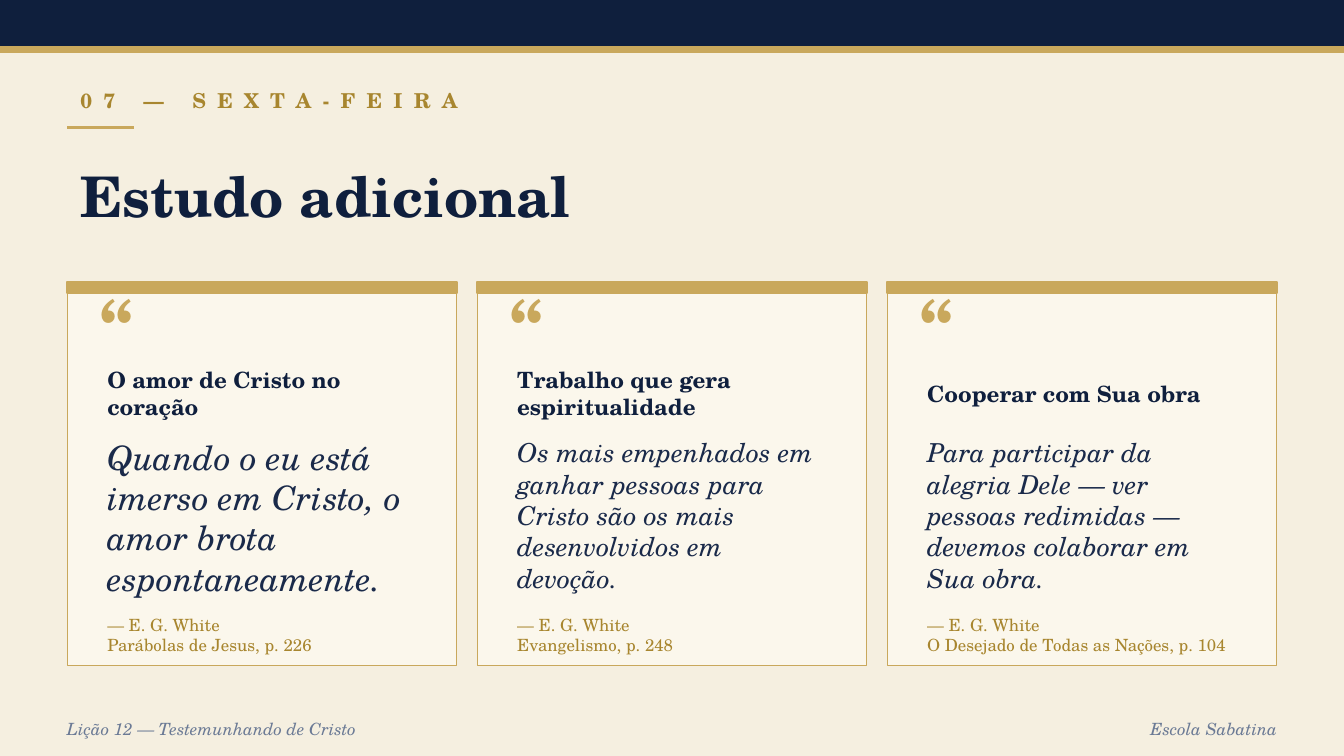
from pptx import Presentation
from pptx.dml.color import RGBColor
from pptx.enum.shapes import MSO_CONNECTOR, MSO_SHAPE
from pptx.enum.text import MSO_ANCHOR, PP_ALIGN
from pptx.oxml.ns import qn
from pptx.util import Pt
from lxml import etree

RECT = MSO_SHAPE.RECTANGLE
STRAIGHT = MSO_CONNECTOR.STRAIGHT
TOP, MIDDLE = MSO_ANCHOR.TOP, MSO_ANCHOR.MIDDLE
LEFT, RIGHT = PP_ALIGN.LEFT, PP_ALIGN.RIGHT

FONT = "TeX Gyre Schola"
COLORS = {
    "cream": "F5EFE0",
    "navy": "0F1F3D",
    "gold": "C9A85C",
    "dark_gold": "A8862F",
    "paper": "FBF7EC",
    "ink": "1A2A4A",
    "slate": "6B7A95",
}

SLIDE_W, SLIDE_H = 720, 405
MARGIN = 36
CARD_TOP, CARD_W, CARD_H = 151.2, 208.8, 205.2
CARD_STEP = (SLIDE_W - 2 * MARGIN - CARD_W) / 2

# Heading, quotation, its size, source
CARDS = [
    ("O amor de Cristo no coração",
     "Quando o eu está imerso em Cristo, o amor brota espontaneamente.",
     18, "Parábolas de Jesus, p. 226"),
    ("Trabalho que gera espiritualidade",
     "Os mais empenhados em ganhar pessoas para Cristo são os mais "
     "desenvolvidos em devoção.",
     14, "Evangelismo, p. 248"),
    ("Cooperar com Sua obra",
     "Para participar da alegria Dele — ver pessoas redimidas — devemos "
     "colaborar em Sua obra.",
     14, "O Desejado de Todas as Nações, p. 104"),
]


def rgb(name):
    return RGBColor.from_string(COLORS[name])


def add_rect(slide, left, top, width, height, fill, line=None, weight=1):
    rect = slide.shapes.add_shape(RECT, Pt(left), Pt(top), Pt(width), Pt(height))
    rect.shadow.inherit = False
    rect.fill.solid()
    rect.fill.fore_color.rgb = rgb(fill)
    rect.line.color.rgb = rgb(line or fill)
    rect.line.width = Pt(weight)


def add_rule(slide, left, top, width, color, weight):
    rule = slide.shapes.add_connector(
        STRAIGHT, Pt(left), Pt(top), Pt(left + width), Pt(top))
    rule.line.color.rgb = rgb(color)
    rule.line.width = Pt(weight)
    etree.SubElement(rule._element.spPr, qn("a:effectLst"))


def add_text(slide, text, left, top, width, height, *, size, color,
             bold=False, italic=False, align=LEFT, anchor=MIDDLE, spacing=0):
    box = slide.shapes.add_textbox(Pt(left), Pt(top), Pt(width), Pt(height))
    frame = box.text_frame
    frame.word_wrap = True
    frame.vertical_anchor = anchor
    frame.text = text
    for paragraph in frame.paragraphs:
        paragraph.alignment = align
        for run in paragraph.runs:
            run.font.name = FONT
            run.font.size = Pt(size)
            run.font.bold = bold
            run.font.italic = italic
            run.font.color.rgb = rgb(color)
            if spacing:
                run._r.get_or_add_rPr().set("spc", str(spacing * 100))


def add_card(slide, left, heading, quotation, quotation_size, source):
    add_rect(slide, left, CARD_TOP, CARD_W, CARD_H, "paper", "gold", 0.5)
    add_rect(slide, left, CARD_TOP, CARD_W, 5.76, "gold")
    add_text(slide, "“", left + 10.8, 154.8, 36, 36,
             size=36, color="gold", bold=True)
    text_left, text_w = left + 14.4, 180
    add_text(slide, heading, text_left, 194.4, text_w, 32.4,
             size=12, color="navy", bold=True)
    add_text(slide, quotation, text_left, 230.4, text_w, 93.6,
             size=quotation_size, color="ink", italic=True, anchor=TOP)
    add_text(slide, "— E. G. White\n" + source, text_left, 327.6, text_w, 25.2,
             size=9, color="dark_gold")


def main():
    prs = Presentation()
    prs.slide_width, prs.slide_height = Pt(SLIDE_W), Pt(SLIDE_H)
    slide = prs.slides.add_slide(prs.slide_layouts[6])
    slide.background.fill.solid()
    slide.background.fill.fore_color.rgb = rgb("cream")

    # Top band
    add_rect(slide, 0, 0, SLIDE_W, 25.2, "navy")
    add_rect(slide, 0, 25.2, SLIDE_W, 2.88, "gold")

    # Footer
    add_text(slide, "Lição 12 — Testemunhando de Cristo", 28.8, 381.6, 432, 18,
             size=9, color="slate", italic=True)
    add_text(slide, "Escola Sabatina", 547.2, 381.6, 144, 18,
             size=9, color="slate", italic=True, align=RIGHT)

    # Section label and title
    add_text(slide, "07 — SEXTA-FEIRA", MARGIN, 43.2, 648, 21.6,
             size=11, color="dark_gold", bold=True, spacing=6)
    add_rule(slide, MARGIN, 68.4, 36, "gold", 1.5)
    add_text(slide, "Estudo adicional", MARGIN, 75.6, 648, 57.6,
             size=30, color="navy", bold=True)

    # Quotation cards
    for column, card in enumerate(CARDS):
        add_card(slide, MARGIN + column * CARD_STEP, *card)

    prs.save("out.pptx")


if __name__ == "__main__":
    main()
